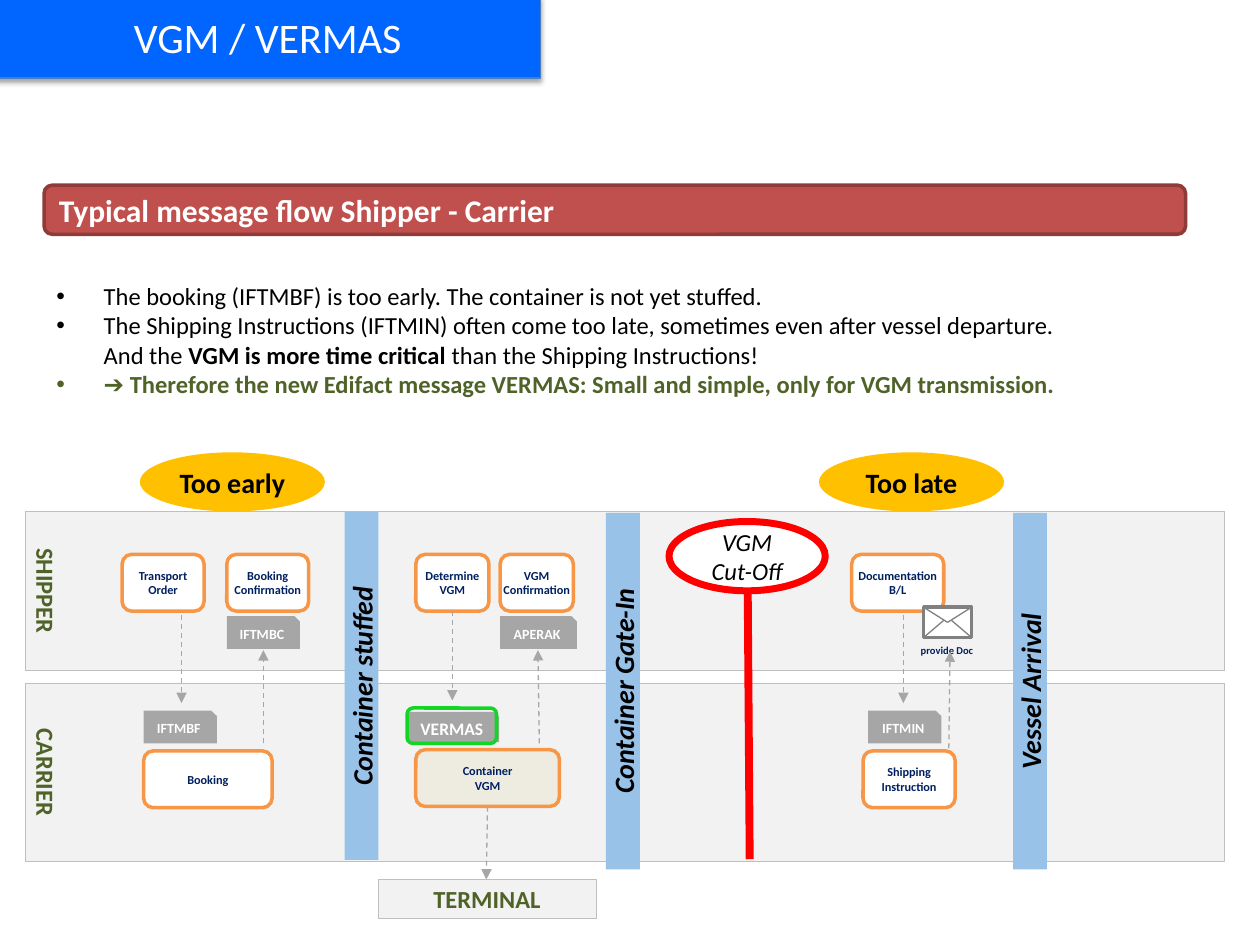
"""Build the VGM / VERMAS slide on the message flow between shipper and carrier."""
from dataclasses import dataclass, replace

from lxml import etree
from pptx import Presentation
from pptx.dml.color import RGBColor
from pptx.enum import dml, shapes, text
from pptx.oxml import ns
from pptx.util import Pt

WHITE = RGBColor(0xFF, 0xFF, 0xFF)
BLACK = RGBColor(0x00, 0x00, 0x00)
NAVY = RGBColor(0x00, 0x20, 0x60)
GREEN = RGBColor(0x4F, 0x62, 0x28)
LIME = RGBColor(0x13, 0xD5, 0x25)
ORANGE = RGBColor(0xF7, 0x96, 0x46)
AMBER = RGBColor(0xFF, 0xC0, 0x00)
RED = RGBColor(0xFF, 0x00, 0x00)
BRICK = RGBColor(0xC0, 0x50, 0x4D)
DARK_BRICK = RGBColor(0x8E, 0x3B, 0x39)
BLUE = RGBColor(0x00, 0x66, 0xFF)
STEEL = RGBColor(0x4B, 0x7E, 0xBC)
SKY = RGBColor(0x98, 0xC2, 0xE8)
CREAM = RGBColor(0xEE, 0xEC, 0xE1)
PALE = RGBColor(0xF2, 0xF2, 0xF2)
SILVER = RGBColor(0xBF, 0xBF, 0xBF)
GREY = RGBColor(0xA6, 0xA6, 0xA6)
DARK_GREY = RGBColor(0x80, 0x80, 0x80)

FORM = shapes.MSO_SHAPE
ANCHOR = text.MSO_ANCHOR
ALIGN = text.PP_ALIGN


@dataclass
class FlowSlide:
    slide: object
    canvas: object
    font: str = "Calibri"

    def group(self):
        return replace(self, canvas=self.canvas.add_group_shape().shapes)

    def add_words(self, paragraph, wording, size, color, bold=True, italic=False):
        for index, part in enumerate(wording.split("\n")):
            if index:
                paragraph.add_line_break()
            run = paragraph.add_run()
            run.text = part
            run.font.name, run.font.size = self.font, Pt(size)
            run.font.bold, run.font.italic = bold, italic
            run.font.color.rgb = color

    def block(self, form, at, fill=None, edge=None, weight=2, turn=0):
        left, top, width, height = at
        if turn:
            left, top = left + (width - height) / 2, top + (height - width) / 2
            width, height = height, width
        block = self.canvas.add_shape(form, Pt(left), Pt(top), Pt(width), Pt(height))
        block.shadow.inherit = False
        block.rotation = turn
        if fill is None:
            block.fill.background()
        else:
            block.fill.solid()
            block.fill.fore_color.rgb = fill
        if edge is None:
            block.line.fill.background()
        else:
            block.line.color.rgb = edge
            block.line.width = Pt(weight)
        return block

    def label(self, block, wording, size, color, bold=True, italic=False,
              align=ALIGN.CENTER, anchor=ANCHOR.MIDDLE, side=7.2, rim=3.6):
        frame = block.text_frame
        frame.word_wrap = True
        frame.vertical_anchor = anchor
        frame.margin_left = frame.margin_right = Pt(side)
        frame.margin_top = frame.margin_bottom = Pt(rim)
        frame.paragraphs[0].alignment = align
        self.add_words(frame.paragraphs[0], wording, size, color, bold, italic)

    def lane(self, wording, top, height):
        lane = self.block(FORM.RECTANGLE, (14.4, top, 685.4, height), PALE, SILVER, 0.25, 90)
        self.label(lane, wording, 14, GREEN, anchor=ANCHOR.BOTTOM)

    def step(self, wording, left, top, width, fill=WHITE, side=7.2):
        step = self.block(FORM.ROUNDED_RECTANGLE, (left, top, width, 32.4), fill, ORANGE)
        self.label(step, wording, 7, NAVY, side=side)

    def message(self, wording, left, top, width=41.8, height=18.7, size=8):
        message = self.block(FORM.SNIP_1_RECTANGLE, (left, top, width, height), GREY)
        self.label(message, wording, size, WHITE)

    def milestone(self, wording, left, top, height):
        bar = self.block(FORM.RECTANGLE, (left, top, 19.4, height), SKY, turn=270)
        self.label(bar, wording, 16, BLACK, italic=True, side=0, rim=0)

    def verdict(self, wording, left):
        verdict = self.block(FORM.OVAL, (left, 258.5, 105.8, 33.8), AMBER)
        self.label(verdict, wording, 16, BLACK, side=0, rim=0)

    def stroke(self, start, end, color, weight=0.75):
        ends = [Pt(value) for value in (*start, *end)]
        stroke = self.canvas.add_connector(shapes.MSO_CONNECTOR.STRAIGHT, *ends)
        stroke.line.color.rgb = color
        stroke.line.width = Pt(weight)
        etree.SubElement(stroke._element.spPr, ns.qn("a:effectLst"))
        return stroke

    def arrow(self, start, end):
        line = self.stroke(start, end, GREY).line
        line.dash_style = dml.MSO_LINE.DASH
        etree.SubElement(line._get_or_add_ln(), ns.qn("a:tailEnd"), type="triangle")

    def text_box(self, at, wrap=True):
        frame = self.canvas.add_textbox(*[Pt(value) for value in at]).text_frame
        frame.word_wrap = wrap
        return frame

    def bullets(self, at, points):
        frame = self.text_box(at)
        for index, runs in enumerate(points):
            paragraph = frame.add_paragraph() if index else frame.paragraphs[0]
            props = paragraph._p.get_or_add_pPr()
            props.set("marL", str(Pt(27)))
            props.set("indent", str(-Pt(27)))
            etree.SubElement(props, ns.qn("a:buFont"), typeface="Arial")
            etree.SubElement(props, ns.qn("a:buChar"), char="•")
            for wording, color, bold in runs:
                self.add_words(paragraph, wording, 14, color, bold)

    def envelope(self, left, top, width, height):
        mail = self.group()
        right, bottom, middle = left + width, top + height, left + width / 2
        mail.block(FORM.RECTANGLE, (left, top, width, height), WHITE, DARK_GREY)
        for corner in (left, right):
            mail.stroke((corner, top), (middle, top + height / 2), DARK_GREY)
        for corner, inner in ((left, middle - 2.2), (right, middle + 2.2)):
            mail.stroke((corner, bottom), (inner, top + 7.5), DARK_GREY)
        caption = mail.text_box((518.4, bottom, 45.4, 14.4), wrap=False).paragraphs[0]
        caption.alignment = ALIGN.CENTER
        mail.add_words(caption, "provide Doc", 6, NAVY)

    def cut_off(self):
        limit = self.group()
        limit.stroke((428.4, 491), (427, 298), RED, 4.5)
        oval = limit.block(FORM.OVAL, (382.3, 298, 89.3, 39.6), WHITE, RED, 4)
        limit.label(oval, "VGM\nCut-Off", 14, BLACK, bold=False, italic=True, side=0)

    def banner(self):
        title = self.block(FORM.RECTANGLE, (-2.9, -2.2, 311.8, 46.8), BLUE, STEEL, 0.75)
        self.label(title, "VGM / VERMAS", 24, WHITE, bold=False)
        effects = title._element.spPr.find(ns.qn("a:effectLst"))
        shadow = etree.SubElement(effects, ns.qn("a:outerShdw"), blurRad=str(Pt(3.1)),
                                  dist=str(Pt(1.8)), dir="5400000", rotWithShape="0")
        tint = etree.SubElement(shadow, ns.qn("a:srgbClr"), val=str(BLACK))
        etree.SubElement(tint, ns.qn("a:alpha"), val="35000")


def main():
    deck = Presentation()
    deck.slide_width, deck.slide_height = Pt(720), Pt(540)
    slide = deck.slides.add_slide(deck.slide_layouts[6])
    flow = FlowSlide(slide, slide.shapes)
    shipper, carrier = 316.8, 429.1
    reply, request = 352.1, 406.1

    flow.lane("CARRIER", 390.2, 102.2)
    flow.lane("SHIPPER", 292.3, 90.7)

    flow.step("Booking", 82.1, carrier, 73.4)
    flow.step("Transport\nOrder", 69.8, shipper, 46.8)
    flow.message("IFTMBF", 82.1, request)
    flow.step("Booking\nConfirmation", 129.6, shipper, 46.8, side=0)
    flow.message("IFTMBC", 129.6, reply)
    flow.arrow((150.5, 424.8), (150.5, 371.5))

    flow.step("Shipping\nInstruction", 493.2, carrier, 52.6)
    flow.step("Documentation B/L", 486.7, shipper, 52.6, side=0)
    flow.message("IFTMIN", 496.1, request)
    for x in (516.2, 103.7):
        flow.arrow((x, 351.4), (x, 401.8))
    flow.envelope(527.8, 347, 27.4, 17.3)
    flow.arrow((542.2, 427.7), (542.9, 372.2))

    flow.milestone("Container Gate-In", 346.3, 293, 203.8)
    flow.milestone("Container stuffed", 196.9, 292.7, 198.7)
    flow.cut_off()

    flow.step("Determine VGM", 237.6, shipper, 41.8, side=0)
    flow.step("Container\nVGM", 237.6, 428.4, 82.1, CREAM)
    flow.message("VERMAS", 232.6, 406.8, 52.6, 17.3, 10)
    flow.block(FORM.ROUNDED_RECTANGLE, (232.6, 404.6, 51.1, 20.2), edge=LIME)
    flow.arrow((258.5, 349.2), (258.5, 400.3))
    flow.verdict("Too early", 79.9)
    flow.step("VGM\nConfirmation", 285.8, shipper, 41.8, side=0)
    flow.message("APERAK", 285.8, reply, 43.9)
    flow.arrow((308.2, 424.8), (307.4, 371.5))

    terminal = flow.block(FORM.RECTANGLE, (216, 502.6, 124.6, 22.3), PALE, SILVER, 0.25)
    flow.label(terminal, "TERMINAL", 14, GREEN)
    flow.arrow((278.6, 460.8), (277.9, 502.6))
    flow.milestone("Vessel Arrival", 578.9, 293, 203.8)
    flow.verdict("Too late", 468)

    heading = flow.block(FORM.ROUNDED_RECTANGLE, (25.2, 105.8, 652.3, 28.1), BRICK, DARK_BRICK)
    flow.label(heading, "Typical message flow Shipper - Carrier", 18, WHITE, align=ALIGN.LEFT)
    flow.bullets((25.2, 157, 652.3, 74.9), [
        [("The booking (IFTMBF) is too early. The container is not yet stuffed.", BLACK, False)],
        [("The Shipping Instructions (IFTMIN) often come too late, sometimes even after "
          "vessel departure.\nAnd the ", BLACK, False),
         ("VGM is more time critical ", BLACK, True),
         ("than the Shipping Instructions!", BLACK, False)],
        [("➔ Therefore the new Edifact message VERMAS: Small and simple, "
          "only for VGM transmission.", GREEN, True)],
    ])
    flow.banner()
    deck.save("out.pptx")


if __name__ == "__main__":
    main()
